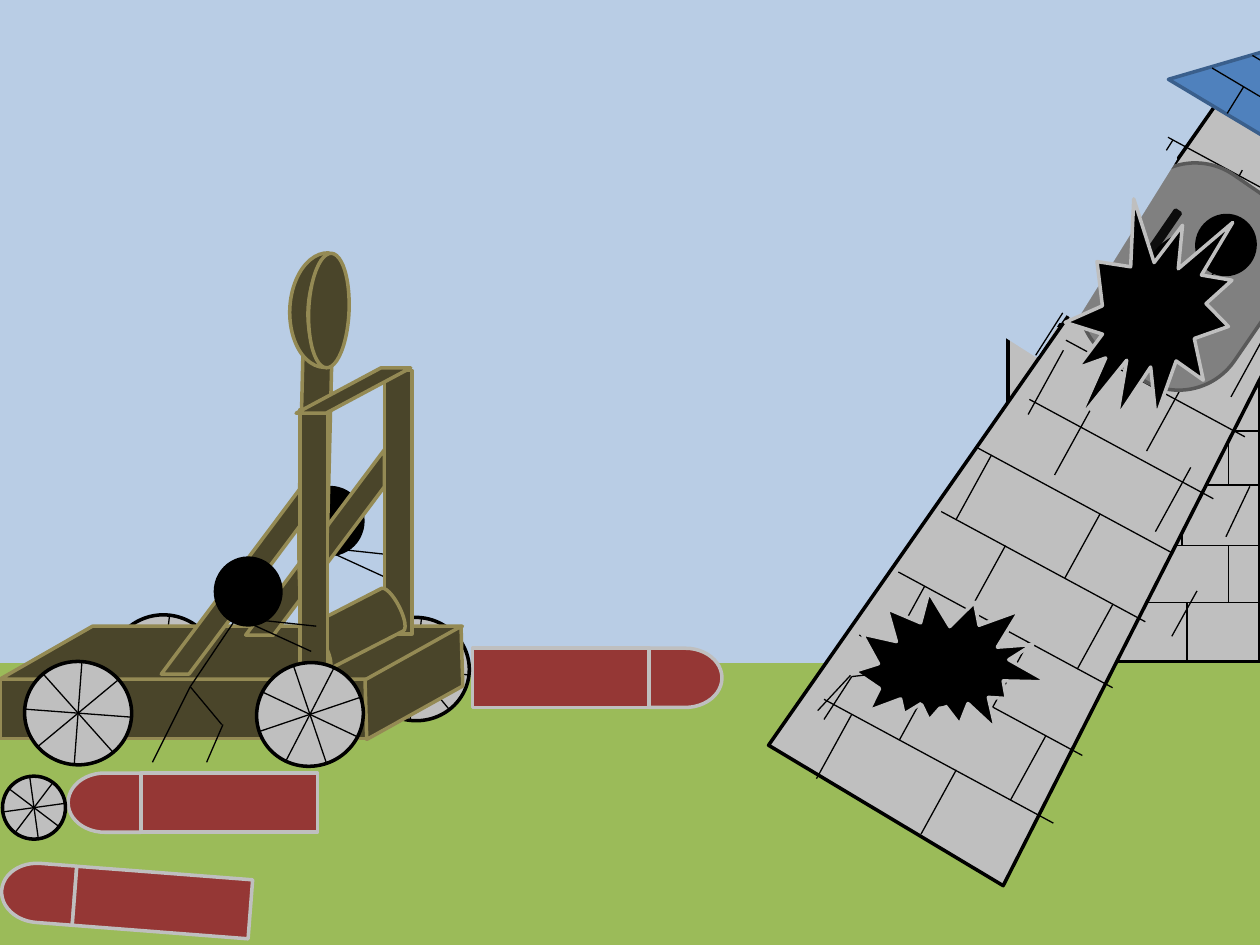
from math import cos, pi, radians, sin

from lxml import etree
from pptx import Presentation
from pptx.dml.color import RGBColor
from pptx.enum.shapes import MSO_CONNECTOR, MSO_SHAPE
from pptx.oxml.ns import qn
from pptx.util import Inches, Pt

# One grid cell is one inch wide and high.
COLUMNS, ROWS = 10, 7.5
HORIZON = 0.7 * ROWS
BRICK_SLOPE = 0.54
JOINT = (-0.28, 0.51)

COLORS = {
    "grass": "9BBB59", "sky": "B9CDE5", "stone": "BFBFBF", "black": "000000",
    "red": "953735", "wood": "4A452A", "wood_edge": "948A54",
    "roof": "4F81BD", "roof_edge": "3A5F8C",
    "window": "808080", "window_edge": "595959", "mark": "0D0D0D",
}
WOOD = ("wood", "wood_edge")
STONE = ("stone", "black")
BLACK = ("black", "black")
SKY = ("sky", "sky")
RED = ("red", "stone")
HOLE = ("black", "stone")

RECTANGLE = MSO_SHAPE.RECTANGLE
ROUNDED = MSO_SHAPE.ROUNDED_RECTANGLE
OVAL = MSO_SHAPE.OVAL
PROCESS = MSO_SHAPE.FLOWCHART_PROCESS
DELAY = MSO_SHAPE.FLOWCHART_DELAY
DATA = MSO_SHAPE.FLOWCHART_DATA
TRAPEZOID = MSO_SHAPE.FLOWCHART_MANUAL_OPERATION
TRIANGLE = MSO_SHAPE.FLOWCHART_EXTRACT
DISC = MSO_SHAPE.FLOWCHART_CONNECTOR
STRIPE = MSO_SHAPE.DIAGONAL_STRIPE
PARALLELOGRAM = MSO_SHAPE.PARALLELOGRAM
CAN = MSO_SHAPE.CAN
MOON = MSO_SHAPE.MOON
PLUS = MSO_SHAPE.MATH_PLUS
ARC = MSO_SHAPE.ARC
BURST = MSO_SHAPE.EXPLOSION1
WIDE_BURST = MSO_SHAPE.EXPLOSION2


def color(name):
    return RGBColor.from_string(COLORS[name])


def new_group(page):
    return page.shapes.add_group_shape().shapes


def add_part(shapes, kind, frame, paint, turn=0, adjust=(), width=2):
    """Add a preset shape; paint is (fill, outline), a fill of None stays empty."""
    part = shapes.add_shape(kind, *(Inches(cells) for cells in frame))
    part.shadow.inherit = False
    part.rotation = turn
    for index, value in enumerate(adjust):
        part.adjustments[index] = value
    fill, outline = paint
    if fill:
        part.fill.solid()
        part.fill.fore_color.rgb = color(fill)
    else:
        part.fill.background()
    part.line.color.rgb = color(outline)
    part.line.width = Pt(width)


def add_line(shapes, x1, y1, x2, y2):
    line = shapes.add_connector(MSO_CONNECTOR.STRAIGHT,
                                Inches(x1), Inches(y1), Inches(x2), Inches(y2))
    line.line.color.rgb = color("black")
    line.line.width = Pt(0.75)
    etree.SubElement(line._element.spPr, qn("a:effectLst"))


def add_lines(shapes, lines):
    for ends in lines:
        add_line(shapes, *ends)


def add_courses(shapes, courses):
    """Draw sloping brick courses, each given as start x, start y and run."""
    for x, y, run in courses:
        add_line(shapes, x, y, x + run, y + run * BRICK_SLOPE)


def add_joints(shapes, starts):
    for x, y in starts:
        add_line(shapes, x, y, x + JOINT[0], y + JOINT[1])


def add_wheel(page, x, y, turn, width=0.85, height=0.82):
    """Draw a wheel centred on x, y with four spokes across it."""
    wheel = new_group(page)
    add_part(wheel, OVAL, (x - width / 2, y - height / 2, width, height), STONE, turn)
    angle = radians(turn)
    for step in range(4):
        across = width / 2 * cos(step * pi / 4)
        down = height / 2 * sin(step * pi / 4)
        dx = across * cos(angle) - down * sin(angle)
        dy = across * sin(angle) + down * cos(angle)
        add_line(wheel, x - dx, y - dy, x + dx, y + dy)


def add_shell(page, x, y, turn):
    """Draw a round-nosed shell centred on x, y and pointing along turn."""
    shell = new_group(page)
    for kind, length, offset in ((DELAY, 0.58, 0.7), (RECTANGLE, 1.4, -0.29)):
        left = x + offset * cos(radians(turn)) - length / 2
        top = y + offset * sin(radians(turn)) - 0.235
        add_part(shell, kind, (left, top, length, 0.47), RED, turn)


def add_person(page, x, y):
    """Draw a stick figure whose hip is at x, y."""
    person = new_group(page)
    limbs = [(0, 0, -0.3, 0.6), (0, 0, 0.25, 0.3), (0.26, 0.3, 0.13, 0.6),
             (0, 0, 0.37, -0.55), (0.37, -0.55, 0.96, -0.28),
             (0.35, -0.55, 1, -0.48)]
    add_lines(person, [(x + a, y + b, x + c, y + d) for a, b, c, d in limbs])
    add_part(person, OVAL, (x + 0.2, y - 1.02, 0.52, 0.53), BLACK)


def add_frame(page, x, y):
    """Draw an upright post at x, y with its slanting brace."""
    frame = new_group(page)
    add_part(frame, STRIPE, (x - 1.1, y + 0.63, 1.1, 1.47), WOOD, 180, [0.8])
    add_part(frame, PROCESS, (x, y, 0.22, 2.09), WOOD)


def add_wall(page):
    add_part(page.shapes, PROCESS, (8, 2.58, 2, 2.67), STONE)
    levels = [2.58, 2.97, 3.42, 3.85, 4.33, 4.78, HORIZON]
    for y in levels[1:-1]:
        add_line(page.shapes, 8.7, y, COLUMNS, y)
    joints = [9.75, 9.38, 9.75, 9.38, 9.75, 9.42]
    for x, top, bottom in zip(joints, levels, levels[1:]):
        add_line(page.shapes, x, top, x, bottom)


def add_catapult(page):
    add_person(page, 2.16, 4.89)
    add_wheel(page, 3.3, 5.31, 6.4)
    add_wheel(page, 1.3, 5.29, 6.4)
    chassis = new_group(page)
    add_part(chassis, PROCESS, (0, 5.39, 2.92, 0.47), WOOD)
    add_part(chassis, DATA, (0, 4.97, 3.67, 0.42), WOOD)
    add_part(chassis, DATA, (2.74, 5.21, 1.09, 0.42), WOOD, 150.9)
    add_frame(page, 3.05, 2.94)
    add_wheel(page, 0.62, 5.66, 4.3)
    arm = new_group(page)
    add_part(arm, DELAY, (1.32, 3.88, 2.34, 0.23), WOOD, 91.4)
    add_part(arm, MOON, (2.3, 2, 0.29, 0.91), WOOD, 2.5)
    add_part(arm, OVAL, (2.45, 2.01, 0.32, 0.91), WOOD, 2.5)
    add_part(page.shapes, CAN, (2.63, 4.6, 0.38, 0.78), WOOD, 242.8, [0.31])
    add_frame(page, 2.38, 3.25)
    add_wheel(page, 2.46, 5.67, 161.3)
    add_person(page, 1.51, 5.45)
    add_part(page.shapes, PARALLELOGRAM, (2.35, 2.92, 0.91, 0.36), WOOD, 0, [1.87])


def add_masonry(tower):
    add_part(tower, TRAPEZOID, (7.53, 0.74, 2.17, 6.17), STONE, 210.9)
    add_part(tower, TRIANGLE, (9.42, 0.1, 2.17, 1.17), ("roof", "roof_edge"), 30.9)
    add_lines(tower, [(9.62, 0.54, 11.05, 1.39), (9.94, 0.44, 10.98, 1.06),
                      (9.87, 0.69, 9.74, 0.9)])
    add_courses(tower, [(6.54, 5.55, 1.82), (6.82, 5.04, 1.77), (7.13, 4.54, 1.7),
                        (7.47, 4.06, 1.62), (7.75, 3.55, 1.55), (8.17, 3.17, 1.46),
                        (9.27, 1.09, 1.14)])
    add_part(tower, RECTANGLE, (8.46, 0.89, 0.33, 2), SKY, 32.5)
    add_line(tower, 8.22, 2.82, 9.31, 1.11)
    add_courses(tower, [(8.46, 2.7, 1.42), (8.9, 1.95, 1.36), (9.13, 1.62, 1.14)])
    add_joints(tower, [(6.76, 5.67), (7.59, 6.11), (8.3, 5.84), (8.16, 5.1),
                       (8.83, 4.8), (8.73, 4.08), (9.45, 3.71), (9.38, 3.07),
                       (10.05, 2.64), (9.83, 2.02), (7.42, 5.36), (7.34, 4.65),
                       (7.98, 4.33), (7.87, 3.61), (8.65, 3.26), (8.44, 2.78),
                       (9.86, 1.35)])


def add_damage(tower):
    """Draw the window, the figure in it and the two holes in the tower."""
    add_part(tower, ROUNDED, (8.73, 1.32, 1.38, 1.75),
             ("window", "window_edge"), 34.5, [0.39])
    add_part(tower, PLUS, (8.96, 1.45, 0.29, 1.17), ("mark", "mark"), 34.5, [0.16])
    add_lines(tower, [(8.99, 2.81, 9.35, 2.55), (9.27, 3, 9.37, 2.56),
                      (9.37, 2.55, 9.65, 2.14), (9.5, 4.69, 9.3, 5.05),
                      (9.92, 3.86, 9.73, 4.26), (9.1, 2.2, 9.51, 2.15),
                      (9.54, 2.15, 9.54, 2.47)])
    add_part(tower, DISC, (9.5, 1.71, 0.46, 0.47), BLACK, 28.4)
    add_part(tower, RECTANGLE, (8.5, 1.02, 0.47, 1.5), SKY, 31.9)
    add_part(tower, ARC, (8.96, 1.95, 1.21, 0.99), (None, "black"), 251.1,
             [158.8, 215.58], width=3)
    add_line(tower, 9.22, 2.27, 9.54, 2.47)
    add_part(tower, WIDE_BURST, (6.81, 4.64, 1.48, 1.27), HOLE, 28.4)
    add_lines(tower, [(9.36, 1.87, 9.22, 2.27), (9.26, 2.23, 9.11, 2.65)])
    add_part(tower, OVAL, (7.17, 5.1, 0.52, 0.47), BLACK, 92)
    add_lines(tower, [(7.2, 5.32, 6.76, 5.37), (6.75, 5.36, 6.49, 5.64),
                      (6.76, 5.37, 6.54, 5.71)])
    add_part(tower, BURST, (8.54, 1.55, 1.19, 1.97), HOLE, 28.4)


def main():
    deck = Presentation()
    deck.slide_width, deck.slide_height = Inches(COLUMNS), Inches(ROWS)
    page = deck.slides.add_slide(deck.slide_layouts[6])
    add_part(page.shapes, RECTANGLE, (0, HORIZON, COLUMNS, ROWS - HORIZON),
             ("grass", "grass"))
    add_part(page.shapes, RECTANGLE, (0, 0, COLUMNS, HORIZON), SKY)
    add_wall(page)
    add_shell(page, 1.53, 6.37, 180)
    add_wheel(page, 0.27, 6.41, 352.1, 0.5, 0.5)
    add_shell(page, 1, 7.14, 184.4)
    add_shell(page, 4.74, 5.38, 0)
    add_catapult(page)
    tower = new_group(page)
    add_masonry(tower)
    add_damage(tower)
    deck.save("out.pptx")


if __name__ == "__main__":
    main()
